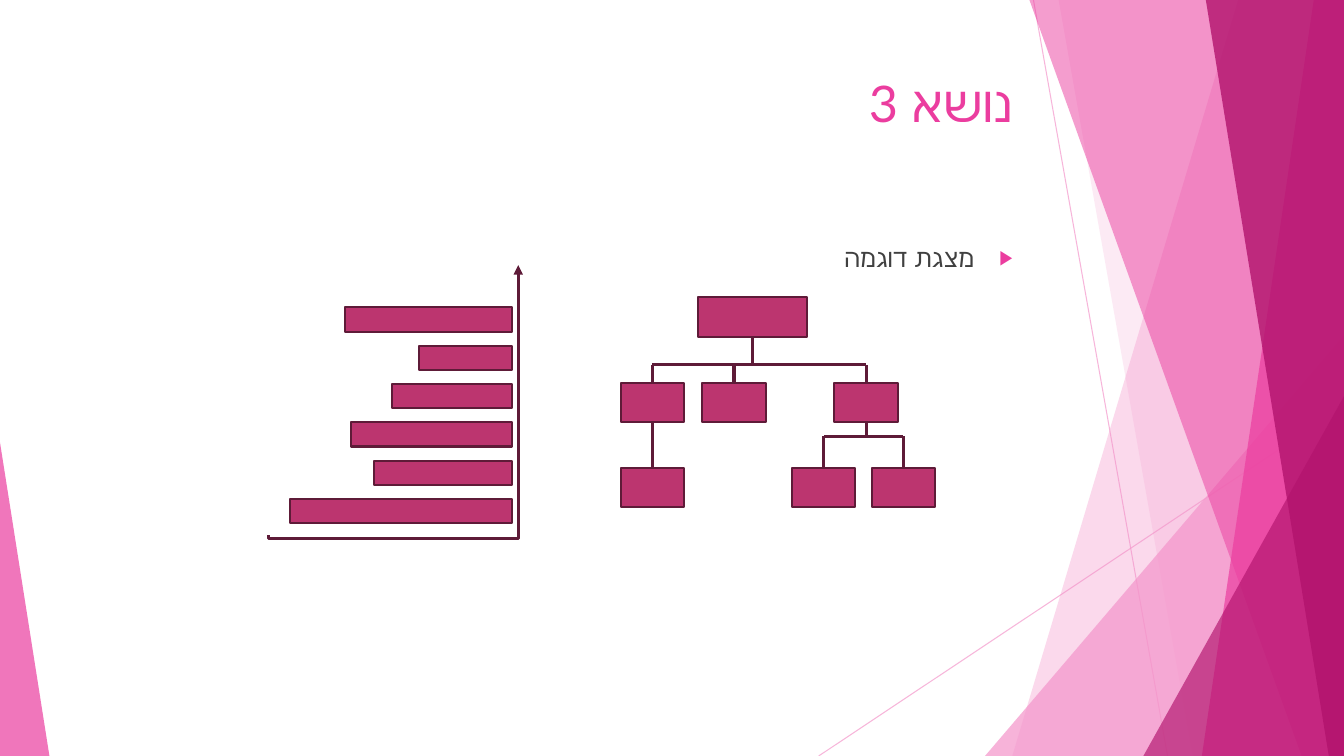
from lxml.etree import SubElement as Sub
from pptx import Presentation
from pptx.dml.color import RGBColor as RGB
from pptx.enum.shapes import MSO_CONNECTOR as Link, MSO_SHAPE as Kind
from pptx.enum.text import MSO_ANCHOR as Anchor, PP_ALIGN as Align
from pptx.oxml.ns import qn
from pptx.util import Inches, Pt

PALE, PINK, DEEP = "F496CB", "EB3D9F", "B2136D"
ROSE, WINE, GREY = "BC356F", "5E1B38", "404040"
WIDE, HIGH = 13.33, 7.5


def paint(color, value, alpha=100):
    """Set a hex colour, with its opacity in percent."""
    color.rgb = RGB.from_string(value)
    if alpha < 100:
        node = color._xFill.find(qn("a:srgbClr"))
        Sub(node, qn("a:alpha"), val=str(alpha * 1000))


class Canvas:
    font = "Lato"

    def __init__(self, deck):
        self.slide = deck.slides.add_slide(deck.slide_layouts[5])
        self.shapes = self.slide.shapes

    def style(self, shape, fill=None, alpha=100, edge=None, width=1.5):
        shape.shadow.inherit = False
        if fill:
            shape.fill.solid()
            paint(shape.fill.fore_color, fill, alpha)
        else:
            shape.fill.background()
        if edge:
            shape.line.width = Pt(width)
            paint(shape.line.color, edge)
        else:
            shape.line.fill.background()

    def box(self, x, y, w, h):
        shape = self.shapes.add_shape(Kind.RECTANGLE, *map(Inches, (x, y, w, h)))
        self.style(shape, ROSE, edge=WINE)

    def wedge(self, x, y, w, h, apex, fill, alpha):
        """Add a triangle whose tip sits at the given share of its width."""
        shape = self.shapes.add_shape(
            Kind.ISOSCELES_TRIANGLE, *map(Inches, (x, y, w, h)))
        shape.adjustments[0] = apex
        self.style(shape, fill, alpha)

    def trace(self, points, close=True):
        """Add an outline through the points."""
        first, *rest = [tuple(map(Inches, p)) for p in points]
        pen = self.shapes.build_freeform(*first)
        pen.add_line_segments(rest, close=close)
        return pen.convert_to_shape()

    def band(self, top, foot, fill, alpha):
        """Add a strip from a slanted left side to the slide's right edge."""
        corners = [(top, 0), (WIDE, 0), (WIDE, HIGH), (foot, HIGH)]
        self.style(self.trace(corners), fill, alpha)

    def axes(self, points):
        shape = self.trace(points, close=False)
        self.style(shape, edge=WINE, width=2.25)
        Sub(shape.line._get_or_add_ln(), qn("a:tailEnd"), type="triangle")

    def line(self, x1, y1, x2, y2, color=WINE, width=2.25, alpha=100):
        link = self.shapes.add_connector(
            Link.STRAIGHT, *map(Inches, (x1, y1, x2, y2)))
        link.line.width = Pt(width)
        paint(link.line.color, color, alpha)
        Sub(link._element.spPr, qn("a:effectLst"))

    def label(self, shape, area, text, size, color):
        """Place a shape and give it one right-to-left paragraph."""
        for name, value in zip(("left", "top", "width", "height"), area):
            setattr(shape, name, Inches(value))
        frame = shape.text_frame
        frame.word_wrap = True
        frame.vertical_anchor = Anchor.TOP
        para = frame.paragraphs[0]
        para.alignment = Align.RIGHT
        run = para.add_run()
        run.text = text
        for name, value in dict(name=self.font, size=Pt(size)).items():
            setattr(run.font, name, value)
        paint(run.font.color, color)
        Sub(run._r.get_or_add_rPr(), qn("a:cs"), typeface=self.font)
        props = para._p.get_or_add_pPr()
        props.set("rtl", "1")
        return para

    def title(self, area, text):
        self.label(self.shapes.title, area, text, 36, PINK)

    def bullet(self, area, text):
        shape = self.shapes.add_textbox(*map(Inches, area))
        para = self.label(shape, area, text, 18, GREY)
        para.space_before = Pt(10)
        props = para._p.get_or_add_pPr()
        props.set("marL", str(Inches(0.38)))
        props.set("indent", str(Inches(-0.38)))
        Sub(Sub(props, qn("a:buClr")), qn("a:srgbClr"), val=PINK)
        Sub(props, qn("a:buSzPct"), val="80000")
        Sub(props, qn("a:buFont"), typeface="Arial")
        Sub(props, qn("a:buChar"), char="▶")


def backdrop(page):
    page.line(10.25, 0, 11.58, HIGH, PALE, 0.75, 70)
    page.line(WIDE, 4.03, 8.12, HIGH, PALE, 0.75, 70)
    page.band(12.28, 10.04, PALE, 36)
    page.band(10.5, 11.83, PALE, 20)
    page.wedge(9.77, 3.33, 3.56, 4.17, 1, PALE, 72)
    page.band(10.21, 12.91, PINK, 50)
    page.band(13.03, 11.92, PINK, 70)
    page.band(11.96, 13.18, DEEP, 80)
    page.wedge(11.34, 3.93, 1.99, 3.57, 1, DEEP, 66)
    page.wedge(0, 4.39, 0.49, 3.11, 0, PINK, 70)


def bars(page):
    right, top, step = 5.08, 3.05, 0.38
    page.axes([(2.66, 5.31), (2.66, 5.34), (5.14, 5.34), (5.14, 2.63)])
    for row, size in enumerate([1.66, 0.92, 1.19, 1.6, 1.37, 2.2]):
        page.box(right - size, top + row * step, size, 0.24)


def tree(page):
    root, left, mid, right = 7.46, 6.47, 7.28, 8.59
    kids = 8.17, 8.96
    rail, fork, upper, lower = 3.62, 4.33, 3.8, 4.64
    wide, high = 0.63, 0.39
    page.line(root, 3.16, root, rail)
    page.line(right, rail, left, rail)
    for x, end in [(left, lower), (mid, upper), (right, fork)]:
        page.line(x, rail, x, end)
    page.line(kids[1], fork, kids[0], fork)
    for x in kids:
        page.line(x, fork, x, lower)
    page.box(6.92, 2.95, 1.08, high)
    for y, row in [(upper, (left, mid, right)), (lower, (left, *kids))]:
        for x in row:
            page.box(x - wide / 2, y, wide, high)


def main():
    deck = Presentation()
    deck.slide_width, deck.slide_height = Inches(WIDE), Inches(HIGH)
    page = Canvas(deck)
    backdrop(page)
    page.title((0.74, 0.67, 9.4, 1.44), "נושא 3")
    page.bullet((0.74, 2.36, 9.4, 4.24), "מצגת דוגמה")
    bars(page)
    tree(page)
    deck.save("out.pptx")


if __name__ == "__main__":
    main()
